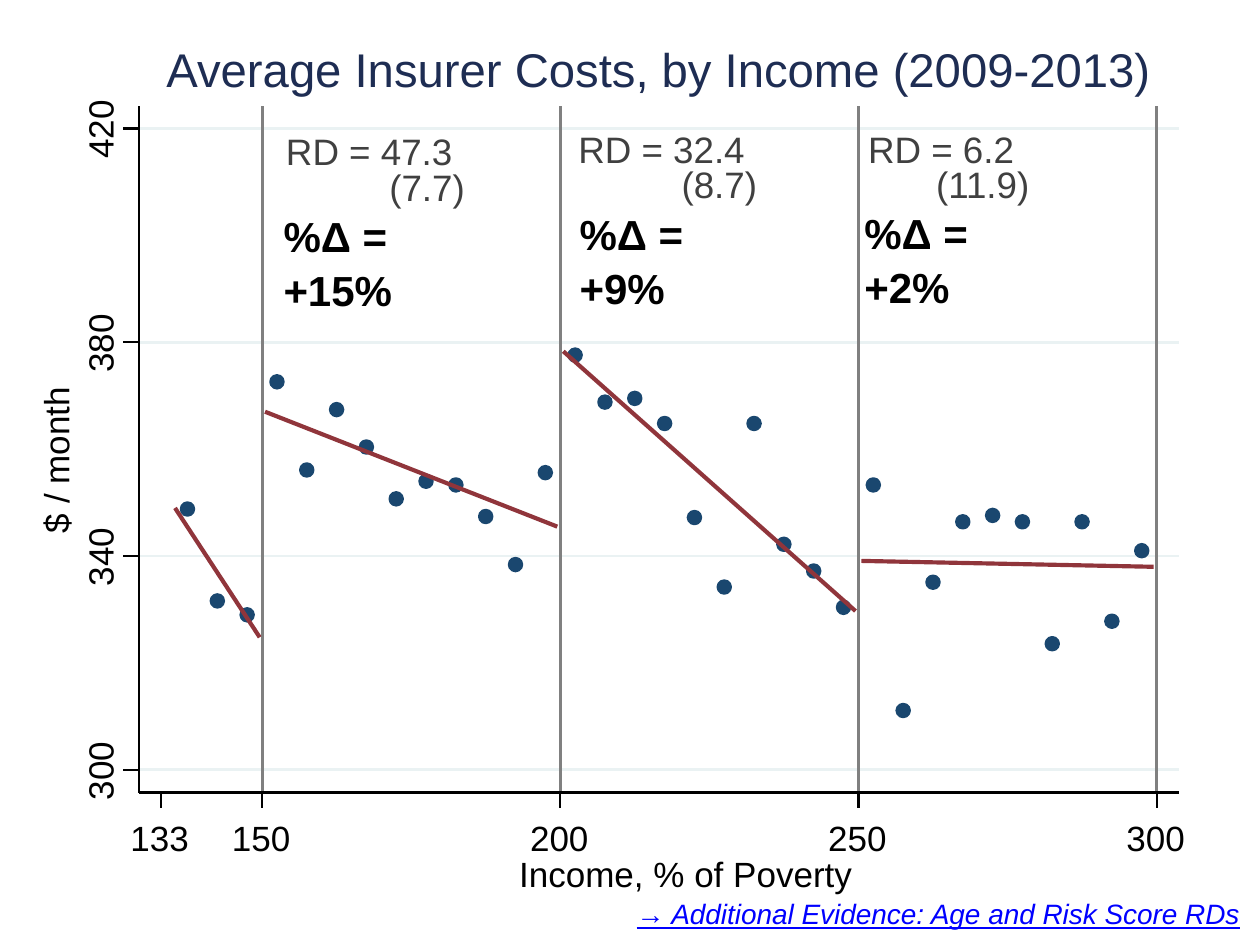
from dataclasses import dataclass

from lxml import etree
from pptx import Presentation
from pptx.dml.color import RGBColor
from pptx.enum.shapes import MSO_CONNECTOR, MSO_SHAPE
from pptx.enum.text import PP_ALIGN
from pptx.oxml.ns import qn
from pptx.util import Inches, Pt

LEFT, CENTER, RIGHT = PP_ALIGN.LEFT, PP_ALIGN.CENTER, PP_ALIGN.RIGHT
STRAIGHT = MSO_CONNECTOR.STRAIGHT
RECTANGLE, OVAL = MSO_SHAPE.RECTANGLE, MSO_SHAPE.OVAL


@dataclass(frozen=True)
class Theme:
    font: str = "Arial"
    paper: str = "FFFFFF"
    ink: str = "000000"
    title: str = "1E2D53"
    estimate: str = "404040"
    grid: str = "EAF2F3"
    cutoff: str = "808080"
    dot: str = "1A476F"
    fit: str = "90353B"
    link: str = "0000FF"
    title_size: int = 27
    change_size: int = 24
    estimate_size: int = 21
    axis_size: int = 20
    link_size: int = 16
    axis_width: float = 1.25
    grid_width: float = 1.63
    fit_width: float = 2.38
    line_spacing: float = 1.07


# Plot area in inches
PLOT_LEFT, PLOT_RIGHT, PLOT_TOP, PLOT_BOTTOM = 1.10, 9.36, 0.84, 6.29
TICK = 0.12
DOT_SIZE = 0.1

COST_TICKS = (300, 340, 380, 420)
CUTOFFS = (150, 200, 250, 300)
INCOME_TICKS = (133,) + CUTOFFS

FIRST_BIN, BIN_WIDTH = 137.5, 5
BIN_COSTS = (
    348.8, 331.6, 329.0,
    372.6, 356.1, 367.4, 360.4, 350.7, 354.0, 353.3, 347.4, 338.4, 355.6,
    377.6, 368.8, 369.5, 364.8, 347.2, 334.2, 364.8, 342.2, 337.2, 330.4,
    353.3, 311.1, 335.1, 346.4, 347.6, 346.4, 323.6, 346.4, 327.8, 341.0,
)
# (income, cost) at both ends of each fitted line
FITS = (
    ((135.4, 349.0), (149.6, 324.8)),
    ((150.5, 367.0), (199.5, 345.5)),
    ((200.5, 378.3), (249.5, 329.7)),
    ((250.5, 339.1), (299.5, 338.0)),
)


def income_x(income):
    return 2.08 + (income - 150) * (9.18 - 2.08) / 150


def cost_y(cost):
    return 6.11 - (cost - 300) * (6.11 - 1.02) / 120


class Figure:
    def __init__(self, slide, theme):
        self.slide = slide
        self.theme = theme

    def shape(self, kind, left, top, width, height, color, line_width):
        shape = self.slide.shapes.add_shape(
            kind, Inches(left), Inches(top), Inches(width), Inches(height))
        shape.shadow.inherit = False
        shape.fill.solid()
        shape.fill.fore_color.rgb = RGBColor.from_string(color)
        self.outline(shape, color, line_width)

    def outline(self, shape, color, width):
        shape.line.color.rgb = RGBColor.from_string(color)
        shape.line.width = Pt(width)

    def line(self, x1, y1, x2, y2, color, width):
        connector = self.slide.shapes.add_connector(
            STRAIGHT, Inches(x1), Inches(y1), Inches(x2), Inches(y2))
        self.outline(connector, color, width)
        etree.SubElement(connector._element.spPr, qn("a:effectLst"))

    def fit(self, start, end):
        (x1, y1), (x2, y2) = [
            (Inches(income_x(income)), Inches(cost_y(cost)))
            for income, cost in (start, end)]
        builder = self.slide.shapes.build_freeform(x1, y1)
        builder.add_line_segments([(x2, y2)], close=False)
        curve = builder.convert_to_shape()
        curve.shadow.inherit = False
        curve.fill.background()
        self.outline(curve, self.theme.fit, self.theme.fit_width)

    def text(self, words, left, top, width, height, size, color, align=LEFT,
             rotation=0, indent=0, inset=(0, 0), bold=False, link=False):
        box = self.slide.shapes.add_textbox(
            Inches(left), Inches(top), Inches(width), Inches(height))
        box.rotation = rotation
        frame = box.text_frame
        frame.word_wrap = True
        across, down = inset
        frame.margin_left = Inches(across + indent)
        frame.margin_right = Inches(across)
        frame.margin_top = frame.margin_bottom = Inches(down)
        frame.text = words
        paragraph = frame.paragraphs[0]
        paragraph.alignment = align
        paragraph.line_spacing = self.theme.line_spacing
        font = paragraph.runs[0].font
        font.name = self.theme.font
        font.size = Pt(size)
        font.bold = bold
        font.italic = font.underline = link
        font.color.rgb = RGBColor.from_string(color)

    def axis_text(self, words, left, top, width, height, rotation=0):
        self.text(words, left, top, width, height, self.theme.axis_size,
                  self.theme.ink, rotation=rotation)

    def estimate(self, effect, error, change, left, top, error_left, indent,
                 change_left, change_top, change_width):
        """Label one cutoff with its jump, standard error and percent change."""
        size, color = self.theme.estimate_size, self.theme.estimate
        self.text(effect, left, top, 1.36, 0.35, size, color)
        self.text(error, error_left, top + 0.28, 1.3, 0.35, size, color,
                  indent=indent)
        self.text(change, change_left, change_top, change_width, 0.8,
                  self.theme.change_size, self.theme.ink, bold=True)


def draw_plot(figure):
    theme = figure.theme
    figure.shape(RECTANGLE, PLOT_LEFT, 0.9, PLOT_RIGHT - PLOT_LEFT, 5.45,
                 theme.paper, theme.axis_width)
    for cost in COST_TICKS:
        y = cost_y(cost)
        figure.line(PLOT_LEFT, y, PLOT_RIGHT, y, theme.grid, theme.grid_width)
    for cutoff in CUTOFFS:
        x = income_x(cutoff)
        figure.line(x, PLOT_BOTTOM, x, PLOT_TOP, theme.cutoff, theme.grid_width)
    for index, cost in enumerate(BIN_COSTS):
        x = income_x(FIRST_BIN + index * BIN_WIDTH)
        figure.shape(OVAL, x - DOT_SIZE / 2, cost_y(cost) - DOT_SIZE / 2,
                     DOT_SIZE, DOT_SIZE, theme.dot, theme.grid_width)
    for start, end in FITS:
        figure.fit(start, end)


def draw_axes(figure):
    ink, width = figure.theme.ink, figure.theme.axis_width
    figure.line(PLOT_LEFT, PLOT_BOTTOM, PLOT_LEFT, PLOT_TOP, ink, width)
    for cost in COST_TICKS:
        y = cost_y(cost)
        figure.line(PLOT_LEFT, y, PLOT_LEFT - TICK, y, ink, width)
        figure.axis_text(str(cost), 0.49, y - 0.26, 0.61, 0.39, rotation=270)
    figure.line(PLOT_LEFT, PLOT_BOTTOM, PLOT_RIGHT, PLOT_BOTTOM, ink, width)
    for income in INCOME_TICKS:
        x = income_x(income)
        figure.line(x, PLOT_BOTTOM, x, PLOT_BOTTOM + TICK, ink, width)
        figure.axis_text(str(income), x - 0.24, 6.46, 0.61, 0.39)
    figure.axis_text("Income, % of Poverty", 4.12, 6.74, 2.7, 0.34)
    figure.axis_text("$ / month", -0.18, 3.46, 1.2, 0.34, rotation=270)


def main():
    deck = Presentation()
    deck.slide_width, deck.slide_height = Inches(10), Inches(7.5)
    theme = Theme()
    figure = Figure(deck.slides.add_slide(deck.slide_layouts[6]), theme)

    draw_plot(figure)
    draw_axes(figure)
    figure.estimate("RD = 47.3", "(7.7)", "%Δ = +15%",
                    2.27, 1.0, 2.44, 0.65, 2.25, 1.64, 1.51)
    figure.estimate("RD = 32.4", "(8.7)", "%Δ = +9%",
                    4.59, 0.98, 4.76, 0.65, 4.6, 1.63, 1.34)
    figure.estimate("RD = 6.2", "(11.9)", "%Δ = +2%",
                    6.89, 0.98, 7.27, 0.16, 6.86, 1.62, 1.34)
    figure.text("Average Insurer Costs, by Income (2009-2013)",
                1.3, 0.29, 7.85, 0.45, theme.title_size, theme.title, CENTER)
    figure.text("→ Additional Evidence: Age and Risk Score RDs",
                4.67, 7.05, 5.27, 0.37, theme.link_size, theme.link, RIGHT,
                inset=(0.1, 0.05), link=True)
    deck.save("out.pptx")


if __name__ == "__main__":
    main()
